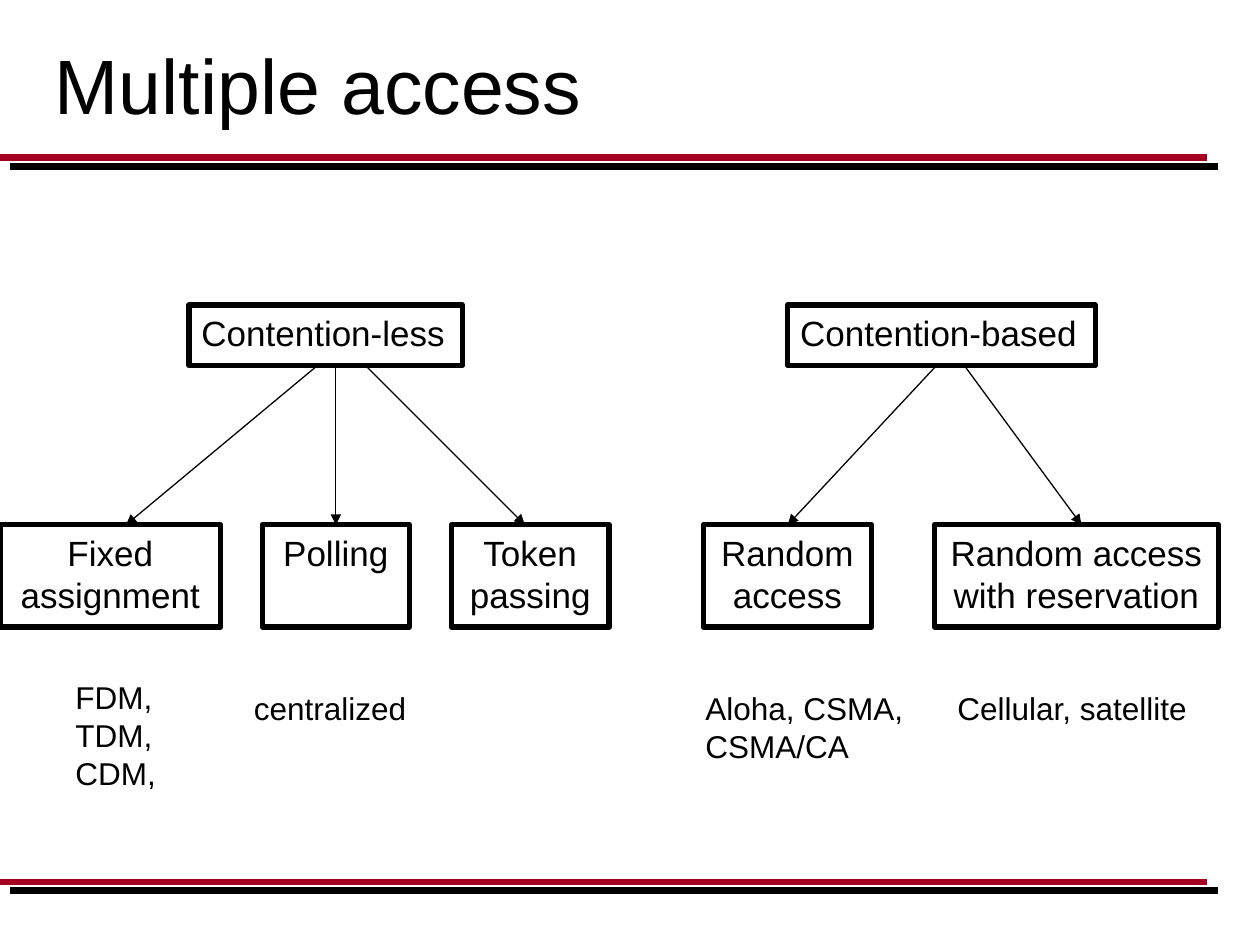
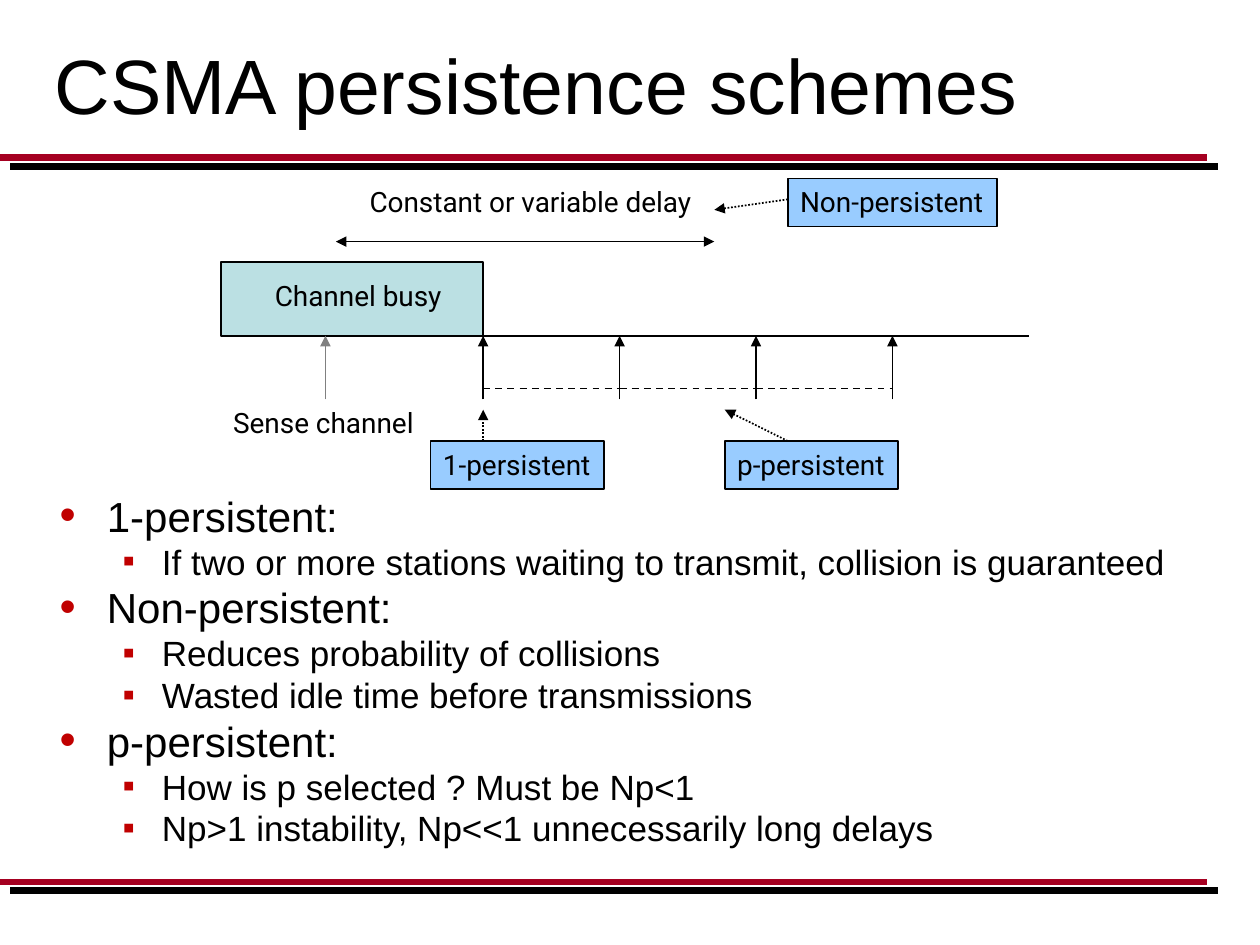
from lxml import etree
from pptx import Presentation
from pptx.dml.color import RGBColor as Rgb
from pptx.enum.dml import MSO_LINE as Dash
from pptx.enum.shapes import MSO_CONNECTOR as Link, MSO_SHAPE as Preset
from pptx.enum.text import MSO_ANCHOR as Anchor, MSO_AUTO_SIZE as AutoSize, PP_ALIGN as Align
from pptx.oxml.ns import qn
from pptx.util import Cm, Pt

COLORS = {"ink": "000000", "paper": "FFFFFF", "band": "A50021", "band_edge": "0000FF",
          "bullet": "C00000", "scheme": "99CCFF", "busy": "BBE0E3", "sense": "808080"}

# Text formats
TITLE = {"name": "Arial", "size": Pt(44)}
TOPIC = {"name": "Arial", "size": Pt(24)}
METHOD = {"name": "Arial", "size": Pt(20)}
EXAMPLE = {"name": "Arial", "size": Pt(18)}
TIMING = {"name": "Roboto", "size": Pt(16)}


def add_label(slide, text, place, style, fill=None, border=0, align=Align.LEFT, wrap=False):
    """Put text on a slide, in a rectangle if a border width is given."""
    place = [Cm(length) for length in place]
    if border:
        label = slide.shapes.add_shape(Preset.RECTANGLE, *place)
        label.shadow.inherit = False
        label.line.color.rgb = Rgb.from_string(COLORS["ink"])
        label.line.width = Pt(border)
        if fill:
            label.fill.solid()
            label.fill.fore_color.rgb = Rgb.from_string(COLORS[fill])
        else:
            label.fill.background()
    else:
        label = slide.shapes.add_textbox(*place)
    frame = label.text_frame
    frame.text = text
    for attribute, value in {"word_wrap": wrap, "vertical_anchor": Anchor.TOP}.items():
        setattr(frame, attribute, value)
    for paragraph in frame.paragraphs:
        paragraph.alignment = align
        for run in paragraph.runs:
            run.font.color.rgb = Rgb.from_string(COLORS["ink"])
            for attribute, value in style.items():
                setattr(run.font, attribute, value)


def add_line(slide, start, end, color="ink", width=1, dash=None, ends=()):
    """Draw a straight line; ends lists headEnd and tailEnd where arrows sit."""
    line = slide.shapes.add_connector(Link.STRAIGHT, *[Cm(v) for v in (*start, *end)])
    line.line.color.rgb = Rgb.from_string(COLORS[color])
    line.line.width = Pt(width)
    if dash:
        line.line.dash_style = dash
    properties = line.element.spPr
    for end_tag in ends:
        etree.SubElement(properties.find(qn("a:ln")), qn(f"a:{end_tag}"), type="triangle")
    etree.SubElement(properties, qn("a:effectLst"))
    return line


deck = Presentation()
deck.slide_width, deck.slide_height = Cm(25.4), Cm(19.05)
access = deck.slides.add_slide(deck.slide_layouts[5])
persistence = deck.slides.add_slide(deck.slide_layouts[1])

# Shared background and bands, moved onto the master
master = deck.slide_master
master.background.fill.solid()
master.background.fill.fore_color.rgb = Rgb.from_string(COLORS["paper"])
for color in ("band_edge", "band"):
    for y in (3.18, 17.78):
        band = add_line(access, (0, y), (24.34, y), color, 4)
        if color == "band_edge":
            shadow = etree.SubElement(band.element.spPr.find(qn("a:effectLst")), qn("a:outerShdw"),
                                      dist=str(Pt(7.8)), dir=str(40 * 60000),
                                      algn="ctr", rotWithShape="0")
            etree.SubElement(shadow, qn("a:srgbClr"), val=COLORS["ink"])
        master.shapes.element.append(band.element)

# Titles
for slide, heading in ((access, "Multiple access"), (persistence, "CSMA persistence schemes")):
    title = slide.shapes.title
    title.left, title.top, title.width, title.height = Cm(0.85), Cm(0), Cm(23.28), Cm(3.39)
    title.text_frame.text = heading
    title.text_frame.vertical_anchor = Anchor.MIDDLE
    title.text_frame.auto_size = AutoSize.NONE
    paragraph = title.text_frame.paragraphs[0]
    paragraph.alignment = Align.LEFT
    font = paragraph.runs[0].font
    font.color.rgb = Rgb.from_string(COLORS["ink"])
    for attribute, value in TITLE.items():
        setattr(font, attribute, value)

# Multiple access: the two families
for family, left, width in (("Contention-less", 3.81, 5.51), ("Contention-based", 15.88, 6.2)):
    add_label(access, family, (left, 6.15, width, 1.22), METHOD, border=3)

# Multiple access: the methods and the arrows that lead to them
for method, left, width, arrow_from, arrow_to in (
        ("Fixed assignment", 0, 4.45, 6.35, 2.54),
        ("Polling", 5.29, 2.96, 6.77, 6.77),
        ("Token passing", 9.1, 3.18, 7.41, 10.58),
        ("Random access", 14.18, 3.39, 18.84, 15.88),
        ("Random access with reservation", 18.84, 5.72, 19.47, 21.8)):
    add_label(access, method, (left, 10.58, width, 2.06), METHOD, border=3,
              align=Align.CENTER, wrap=True)
    add_line(access, (arrow_from, 7.41), (arrow_to, 10.58), width=0.75, ends=["tailEnd"])

# Multiple access: examples below the methods
for example, place in (("FDM,\nTDM,\nCDM,", (1.27, 13.55, 2.13, 2.54)),
                       ("centralized", (4.87, 13.76, 3.58, 1.02)),
                       ("Aloha, CSMA,\nCSMA/CA", (13.97, 13.76, 4.5, 1.78)),
                       ("Cellular, satellite", (19.05, 13.76, 5.16, 1.02))):
    add_label(access, example, place, EXAMPLE)

# Persistence: busy channel and captions
add_label(persistence, "", (4.45, 5.29, 5.29, 1.48), TIMING, fill="busy", border=1)
for caption, left, top, width in (("Channel busy", 5.29, 5.5, 3.96),
                                  ("Constant or variable delay", 7.2, 3.6, 7.06),
                                  ("Sense channel", 4.45, 8.05, 4.24)):
    add_label(persistence, caption, (left, top, width, 0.94), TIMING)

# Persistence: time axis with evenly spaced slots
axis_y, slot_y, first_slot, slot_gap, slots = 6.77, 8.05, 9.74, 2.75, 4
add_line(persistence, (first_slot, axis_y), (20.75, axis_y))
for slot in range(slots):
    x = first_slot + slot * slot_gap
    add_line(persistence, (x, slot_y), (x, axis_y), ends=["tailEnd"])
    if slot < slots - 1:
        add_line(persistence, (x, 7.83), (x + slot_gap, 7.83), dash=Dash.DASH)
add_line(persistence, (6.56, slot_y), (6.56, axis_y), "sense", ends=["tailEnd"])
add_line(persistence, (6.77, 4.87), (14.4, 4.87), ends=["headEnd", "tailEnd"])

# Persistence: scheme names with dotted pointers
for scheme, left, top, width, start, end in (
        ("Non-persistent", 15.88, 3.6, 4.22, (15.88, 4.02), (14.4, 4.23)),
        ("p-persistent", 14.61, 8.89, 3.5, (15.88, 8.89), (14.61, 8.26)),
        ("1-persistent", 8.68, 8.89, 3.5, (9.74, 8.89), (9.74, 8.26))):
    add_label(persistence, scheme, (left, top, width, 0.97), TIMING, fill="scheme", border=1)
    add_line(persistence, start, end, dash=Dash.ROUND_DOT, ends=["tailEnd"])

# Persistence: properties of each scheme
LEVELS = ({"style": TOPIC, "bullet": "•", "size": 110, "margin": 0.95, "hang": 0.95, "before": 5.5},
          {"style": METHOD, "bullet": "▪", "size": 100, "margin": 2.06, "hang": 0.79, "before": 4.6})
PROPERTIES = (
    (0, "1-persistent:"),
    (1, "If two or more stations waiting to transmit, collision is guaranteed"),
    (0, "Non-persistent:"),
    (1, "Reduces probability of collisions"),
    (1, "Wasted idle time before transmissions"),
    (0, "p-persistent:"),
    (1, "How is p selected ? Must be Np<1"),
    (1, "Np>1 instability, Np<<1 unnecessarily long delays"))
body = persistence.placeholders[1]
body.left, body.top, body.width, body.height = Cm(0.95), Cm(9.95), Cm(22.93), Cm(7.42)
body.text_frame.text = "\n".join(text for _, text in PROPERTIES)
body.text_frame.auto_size = AutoSize.NONE
for index, (paragraph, (level, _)) in enumerate(zip(body.text_frame.paragraphs, PROPERTIES)):
    look = LEVELS[level]
    paragraph.level = level
    paragraph.line_spacing = 0.8
    paragraph.space_before = Pt(look["before"] if index else 0)
    layout = paragraph.runs[0].font
    marks = paragraph._p.get_or_add_pPr()
    marks.set("marL", str(Cm(look["margin"])))
    marks.set("indent", str(-Cm(look["hang"])))
    bullet_color = etree.SubElement(marks, qn("a:buClr"))
    etree.SubElement(bullet_color, qn("a:srgbClr"), val=COLORS["bullet"])
    etree.SubElement(marks, qn("a:buSzPct"), val=str(look["size"] * 1000))
    etree.SubElement(marks, qn("a:buFont"), typeface="Arial")
    etree.SubElement(marks, qn("a:buChar"), char=look["bullet"])
    layout.color.rgb = Rgb.from_string(COLORS["ink"])
    for attribute, value in look["style"].items():
        setattr(layout, attribute, value)

deck.save("out.pptx")
